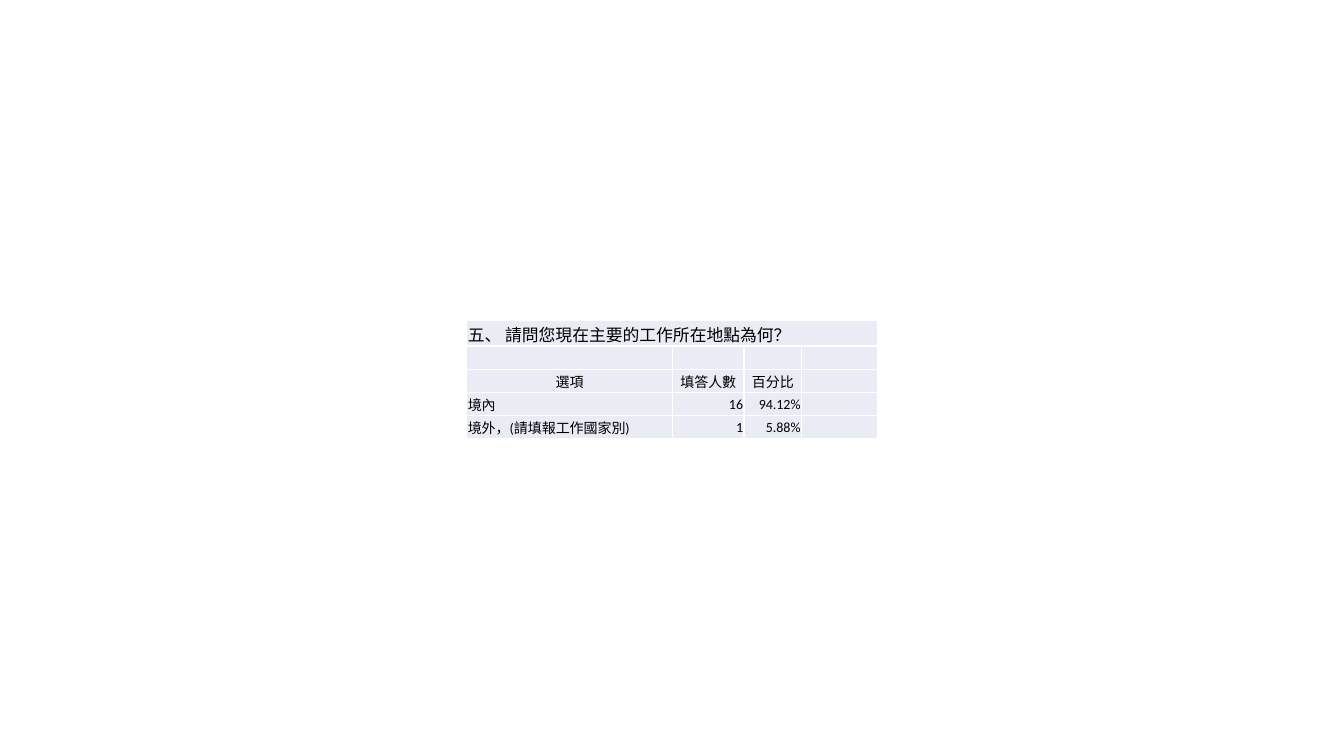
from pptx import Presentation
from pptx import util as u
from pptx.dml.color import RGBColor
from pptx.enum import text
from pptx.oxml import parse_xml
from pptx.oxml.ns import nsdecls

# Content
TITLE = "五、 請問您現在主要的工作所在地點為何？"
HEAD = ("選項", "填答人數", "百分比", "")
DATA = [
    ("境內", "16", "94.12%", ""),
    ("境外，(請填報工作國家別)", "1", "5.88%", ""),
]
ROWS = [(TITLE, "", "", ""), ("",) * 4, HEAD, *DATA]

# Theme and layout
THEME = {"font": "Calibri", "ink": "000000", "cell": "E9EBF5",
         "rule": "FFFFFF", "title": 12, "body": 10}
LEFT, TOP, HIGH = 4.63, 3.18, 0.23
COLS = (2.04, 0.71, 0.57, 0.75)
PAD = {"margin_left": 0.01, "margin_right": 0.01,
       "margin_top": 0.01, "margin_bottom": 0}
ALIGN = text.PP_ALIGN


def align(row, col):
    if ROWS[row] is HEAD:
        return ALIGN.CENTER
    return ALIGN.RIGHT if col and row else ALIGN.LEFT


def frame(cell):
    props = cell._tc.get_or_add_tcPr()
    for side in "LRTB":
        props.append(parse_xml(
            f'<a:ln{side} {nsdecls("a")} w="{u.Pt(1)}"><a:solidFill>'
            f'<a:srgbClr val="{THEME["rule"]}"/></a:solidFill></a:ln{side}>'))
    cell.fill.solid()
    cell.fill.fore_color.rgb = RGBColor.from_string(THEME["cell"])


def write(cell, words, size, side):
    para = cell.text_frame.paragraphs[0]
    para.alignment = side
    if not words:
        # An empty cell keeps the row low through its end mark
        para._p.append(parse_xml(
            f'<a:endParaRPr {nsdecls("a")} sz="{size * 100}"/>'))
        return
    run = para.add_run()
    run.text = words
    for name, value in {"name": THEME["font"], "size": u.Pt(size)}.items():
        setattr(run.font, name, value)
    run.font.color.rgb = RGBColor.from_string(THEME["ink"])


def main():
    deck = Presentation()
    deck.slide_width, deck.slide_height = u.Inches(13.33), u.Inches(7.5)
    slide = deck.slides.add_slide(deck.slide_layouts[6])

    # Survey table
    box = (LEFT, TOP, sum(COLS), HIGH * len(ROWS))
    grid = slide.shapes.add_table(
        len(ROWS), len(COLS), *map(u.Inches, box)).table
    grid.first_row = grid.horz_banding = False
    for col, wide in zip(grid.columns, COLS):
        col.width = u.Inches(wide)
    for row in grid.rows:
        row.height = u.Inches(HIGH)

    # Cells
    for r, line in enumerate(ROWS):
        for c, words in enumerate(line):
            cell = grid.cell(r, c)
            frame(cell)
            cell.vertical_anchor = text.MSO_ANCHOR.MIDDLE
            for name, gap in PAD.items():
                setattr(cell, name, u.Inches(gap))
            size = THEME["body" if r else "title"]
            write(cell, words, size, align(r, c))
    grid.cell(0, 0).merge(grid.cell(0, len(COLS) - 1))

    deck.save("out.pptx")


if __name__ == "__main__":
    main()
